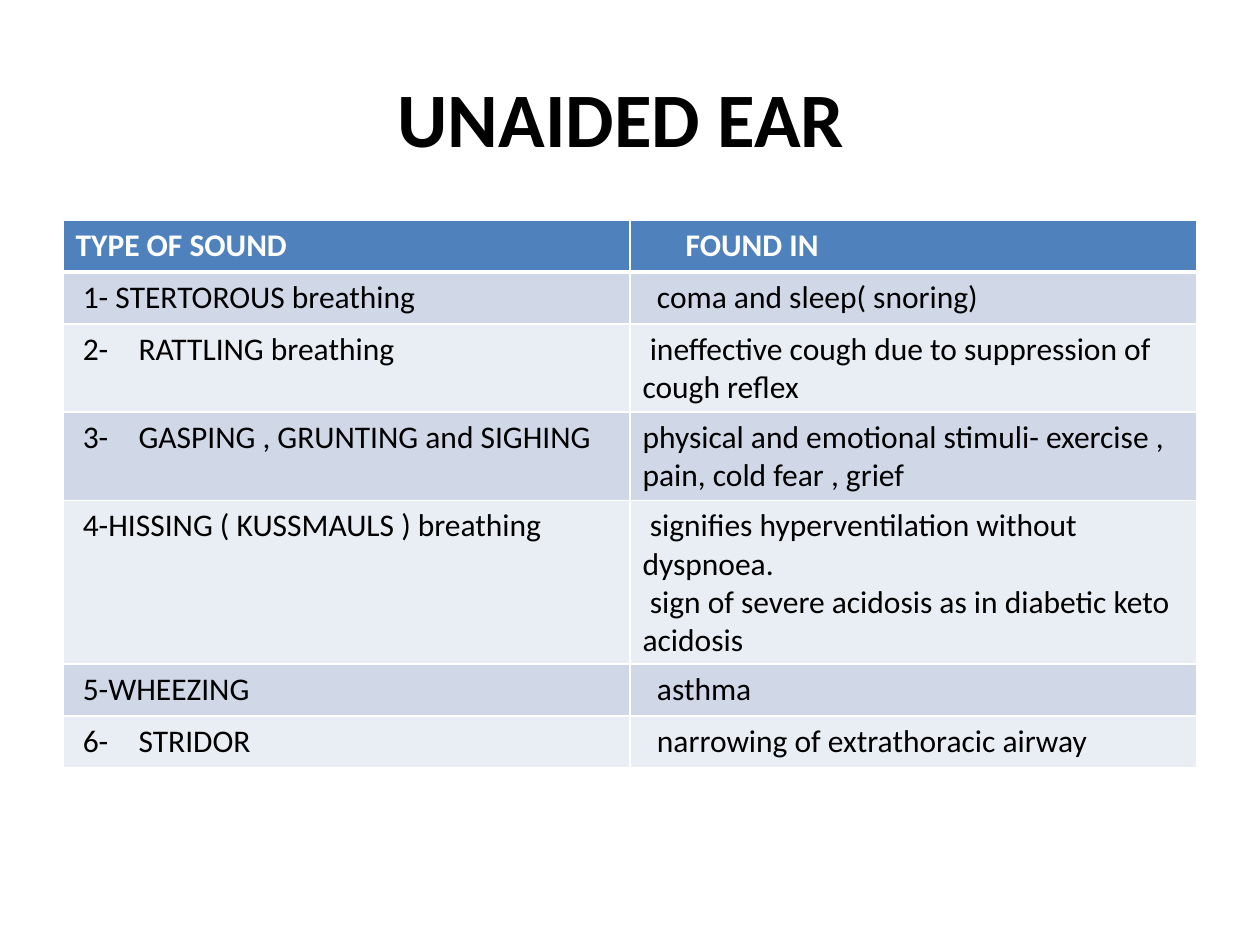
import dataclasses
import pptx
import pptx.util
import pptx.dml.color
import pptx.enum.text
import pptx.oxml.ns
import lxml.etree

Inches, Pt = pptx.util.Inches, pptx.util.Pt


@dataclasses.dataclass(frozen=True)
class Theme:
    font: str = "Calibri"
    title: int = 44
    body: int = 18
    ink: str = "000000"
    white: str = "FFFFFF"
    head: str = "4F81BD"
    bands: tuple = ("D0D8E8", "E9EDF4")
    line: int = 1
    rule: int = 3


THEME = Theme()
SPACE = 0.057  # width of one space at body size, in inches

# Each cell holds paragraphs: (first-line indent in spaces, text, tab stop in inches)
ROWS = [
    ([(0, "TYPE OF SOUND", 0)], [(6, "FOUND IN", 0)]),
    ([(1, "1- STERTOROUS breathing", 0)], [(2, "coma and sleep( snoring)", 0)]),
    ([(1, "2-\tRATTLING breathing", 0.37)],
     [(1, "ineffective cough due to suppression of cough reflex", 0)]),
    ([(1, "3-\tGASPING , GRUNTING and SIGHING", 0.54)],
     [(0, "physical and emotional stimuli- exercise , pain, cold fear , grief", 0)]),
    ([(1, "4-HISSING ( KUSSMAULS ) breathing", 0)],
     [(1, "signifies hyperventilation without dyspnoea.", 0),
      (1, "sign of severe acidosis as in diabetic keto acidosis", 0)]),
    ([(1, "5-WHEEZING", 0)], [(2, "asthma", 0)]),
    ([(1, "6-\tSTRIDOR", 0.37)], [(2, "narrowing of extrathoracic airway", 0)]),
]


def add_sub(parent, tag, **attrs):
    node = lxml.etree.SubElement(parent, pptx.oxml.ns.qn(tag))
    for name, value in attrs.items():
        node.set(name, str(value))
    return node


def style(par, size, color, bold):
    for run in par.runs:
        run.font.name = THEME.font
        run.font.size = Pt(size)
        run.font.bold = bold
        run.font.color.rgb = pptx.dml.color.RGBColor.from_string(color)


def set_edges(cell, top, base):
    props = cell._tc.get_or_add_tcPr()
    widths = (THEME.line, THEME.line, top, base)
    for side, width in zip("LRTB", widths):
        edge = add_sub(props, f"a:ln{side}", w=Pt(width))
        fill = add_sub(edge, "a:solidFill")
        add_sub(fill, "a:srgbClr", val=THEME.white)


def set_text(cell, items, color, bold):
    frame = cell.text_frame
    for i, (gap, text, stop) in enumerate(items):
        par = frame.add_paragraph() if i else frame.paragraphs[0]
        par.text = text
        style(par, THEME.body, color, bold)
        props = par._p.get_or_add_pPr()
        props.set("marL", "0")
        props.set("indent", str(Inches(gap * SPACE)))
        if stop:
            tabs = add_sub(props, "a:tabLst")
            add_sub(tabs, "a:tab", pos=Inches(stop), algn="l")


def add_title(slide, box):
    frame = slide.shapes.add_textbox(*box).text_frame
    frame.word_wrap = True
    frame.vertical_anchor = pptx.enum.text.MSO_ANCHOR.MIDDLE
    par = frame.paragraphs[0]
    par.text = "UNAIDED EAR "
    par.alignment = pptx.enum.text.PP_ALIGN.CENTER
    style(par, THEME.title, THEME.ink, True)


def add_sounds(slide, box):
    table = slide.shapes.add_table(len(ROWS), len(ROWS[0]), *box).table
    for r, row in enumerate(ROWS):
        head = r == 0
        # Rows grow to fit wrapped text
        table.rows[r].height = Inches(0.41)
        shade = THEME.head if head else THEME.bands[(r - 1) % 2]
        for c, items in enumerate(row):
            cell = table.cell(r, c)
            set_text(cell, items, THEME.white if head else THEME.ink, head)
            set_edges(cell, THEME.rule if r == 1 else THEME.line,
                      THEME.rule if head else THEME.line)
            cell.fill.solid()
            cell.fill.fore_color.rgb = pptx.dml.color.RGBColor.from_string(shade)


def main():
    deck = pptx.Presentation()
    deck.slide_width, deck.slide_height = Inches(10), Inches(7.5)
    slide = deck.slides.add_slide(deck.slide_layouts[6])
    # Heading
    add_title(slide, (Inches(0.5), Inches(0.3), Inches(9), Inches(1.25)))
    # Breath sounds and their causes
    add_sounds(slide, (Inches(0.5), Inches(1.75), Inches(9), Inches(2.87)))
    deck.save("out.pptx")


if __name__ == "__main__":
    main()
